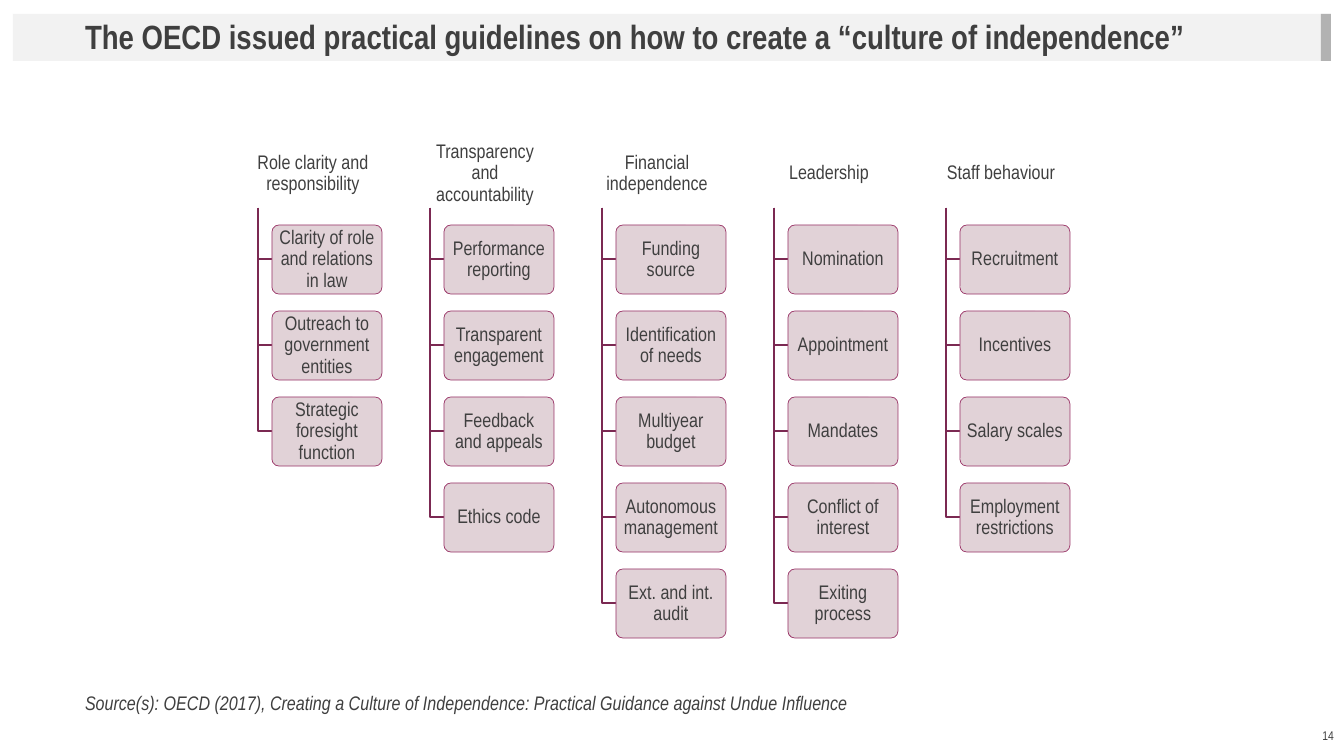
from lxml.etree import SubElement
from pptx import Presentation
from pptx.dml.color import RGBColor
from pptx.enum.shapes import MSO_SHAPE
from pptx.enum.text import MSO_ANCHOR, PP_ALIGN
from pptx.oxml.ns import qn
from pptx.util import Pt

EMU_PER_PX = 914400 / 100.8
FONT = "Arial Narrow"
INK = "3F3F3F"

PILLARS = [
    ("Role clarity and responsibility",
     ["Clarity of role and relations in law", "Outreach to government entities",
      "Strategic foresight function"]),
    ("Transparency and accountability",
     ["Performance reporting", "Transparent engagement", "Feedback and appeals",
      "Ethics code"]),
    ("Financial independence",
     ["Funding source", "Identification of needs", "Multiyear budget",
      "Autonomous management", "Ext. and int. audit"]),
    ("Leadership",
     ["Nomination", "Appointment", "Mandates", "Conflict of interest",
      "Exiting process"]),
    ("Staff behaviour",
     ["Recruitment", "Incentives", "Salary scales", "Employment restrictions"]),
]


def px(n):
    return round(n * EMU_PER_PX)


def rgb(value):
    return RGBColor.from_string(value)


def write(sp, text, size=14, bold=False, italic=False, align=PP_ALIGN.LEFT,
          anchor=MSO_ANCHOR.TOP, inset=(10, 5), spacing=None):
    tf = sp.text_frame
    tf.word_wrap = True
    tf.vertical_anchor = anchor
    tf.margin_left = tf.margin_right = px(inset[0])
    tf.margin_top = tf.margin_bottom = px(inset[1])
    p = tf.paragraphs[0]
    p.alignment = align
    p.line_spacing = spacing
    r = p.add_run()
    r.text = text
    r.font.name = FONT
    r.font.size = Pt(size)
    r.font.bold = bold
    r.font.italic = italic
    r.font.color.rgb = rgb(INK)


def add_text(s, box, text, **fmt):
    sp = s.shapes.add_textbox(*map(px, box))
    write(sp, text, **fmt)


def add_block(s, box, fill, kind=MSO_SHAPE.RECTANGLE, line=None):
    sp = s.shapes.add_shape(kind, *map(px, box))
    sp.shadow.inherit = False
    sp.fill.solid()
    sp.fill.fore_color.rgb = rgb(fill)
    if line:
        sp.line.color.rgb = rgb(line)
        sp.line.width = Pt(0.5)
    else:
        sp.line.fill.background()
    return sp


def add_card(s, box, text, fill, line=None):
    sp = add_block(s, box, fill, MSO_SHAPE.ROUNDED_RECTANGLE, line)
    sp.adjustments[0] = 0.1
    write(sp, text, align=PP_ALIGN.CENTER, anchor=MSO_ANCHOR.MIDDLE,
          inset=(3, 2), spacing=0.9)
    return sp


def add_elbow(s, x, top, right, bottom):
    builder = s.shapes.build_freeform(px(x), px(top))
    builder.add_line_segments([(px(x), px(bottom)), (px(right), px(bottom))],
                              close=False)
    sp = builder.convert_to_shape()
    sp.shadow.inherit = False
    sp.fill.background()
    sp.line.color.rgb = rgb("7B2952")
    sp.line.width = Pt(1)


def add_title_bar(s, x, y, w, h, title):
    add_block(s, (x, y, w, h), "F2F2F2")
    add_block(s, (x + w - 10, y, 10, h), "B2B2B2")
    add_text(s, (x + 62, y + 1, w - 72, h), title, size=24, bold=True, spacing=0.9)


def add_pillar(s, x, y, w, h, heading, items):
    add_card(s, (x, y, w, h), heading, "FFFFFF")
    stem, left, gap = x + 14, x + 28, h // 4
    for i, item in enumerate(items, 1):
        top = y + i * (h + gap)
        add_elbow(s, stem, y + h, left, top + h // 2)
        card = add_card(s, (left, top, x + w - left, h), item, "DECED3", "993366")
        color = card.fill._xPr.find(qn("a:solidFill"))[0]
        SubElement(color, qn("a:alpha"), val="90000")


def add_pillars(s, x, y, w, h, pitch):
    for i, (heading, items) in enumerate(PILLARS):
        add_pillar(s, x + i * pitch, y, w, h, heading, items)


def add_footer(s, x, y, w, h, source, number):
    add_text(s, (x, y, 1116, 34), source, italic=True)
    add_text(s, (x + w - 302, y + h - 40, 302, 40), number, size=9,
             align=PP_ALIGN.RIGHT, anchor=MSO_ANCHOR.MIDDLE)


def main():
    prs = Presentation()
    prs.slide_width, prs.slide_height = px(1344), px(756)
    s = prs.slides.add_slide(prs.slide_layouts[6])
    add_title_bar(s, 13, 14, 1318, 47,
                  "The OECD issued practical guidelines on how to create a "
                  "“culture of independence”")
    add_pillars(s, 244, 139, 138, 69, 172)
    add_footer(s, 75, 686, 1269, 70,
               "Source(s): OECD (2017), Creating a Culture of Independence: "
               "Practical Guidance against Undue Influence", "14")
    prs.save("out.pptx")


if __name__ == "__main__":
    main()
